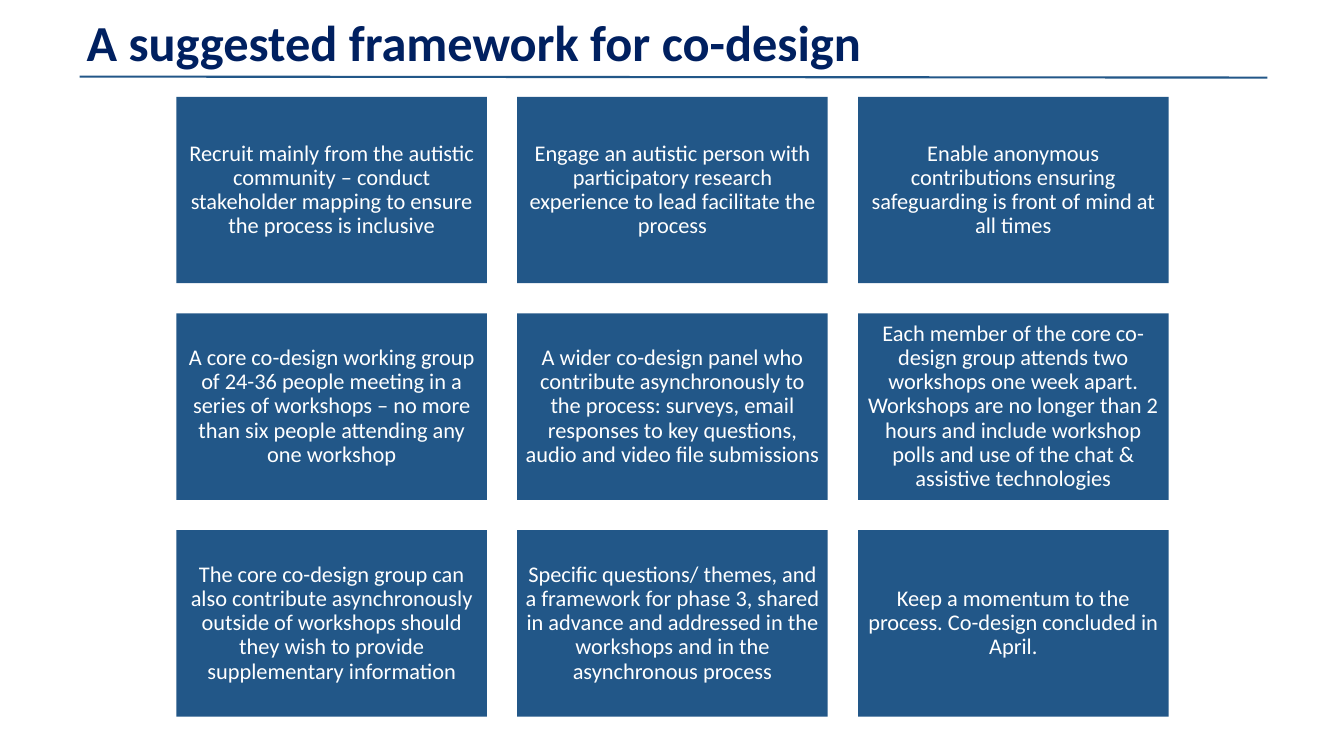
from lxml import etree
from pptx import Presentation
from pptx.dml.color import RGBColor
from pptx.enum import shapes, text
from pptx.oxml.ns import qn
from pptx.util import Inches, Pt

NAVY = RGBColor(0x00, 0x20, 0x60)
BLUE = RGBColor(0x22, 0x57, 0x88)
WHITE = RGBColor(0xFF, 0xFF, 0xFF)

LEFT, TOP = 1.75, 0.96
WIDTH, HEIGHT = 3.08, 1.85
GAP = 0.3
COLS = 3

STEPS = [
    "Recruit mainly from the autistic community – conduct stakeholder mapping "
    "to ensure the process is inclusive",
    "Engage an autistic person with participatory research experience to lead "
    "facilitate the process",
    "Enable anonymous contributions ensuring safeguarding is front of mind at "
    "all times",
    "A core co-design working group of 24-36 people meeting in a series of "
    "workshops – no more than six people attending any one workshop",
    "A wider co-design panel who contribute asynchronously to the process: "
    "surveys, email responses to key questions, audio and video file submissions",
    "Each member of the core co-design group attends two workshops one week "
    "apart. Workshops are no longer than 2 hours and include workshop polls and "
    "use of the chat & assistive technologies",
    "The core co-design group can also contribute asynchronously outside of "
    "workshops should they wish to provide supplementary information",
    "Specific questions/ themes, and a framework for phase 3, shared in advance "
    "and addressed in the workshops and in the asynchronous process",
    "Keep a momentum to the process. Co-design concluded in April.",
]


def write(shape, words, size, color, bold=False, align=text.PP_ALIGN.LEFT,
          spacing=1.0, inset=None):
    frame = shape.text_frame
    frame.word_wrap = True
    frame.auto_size = text.MSO_AUTO_SIZE.NONE
    frame.vertical_anchor = text.MSO_ANCHOR.MIDDLE
    if inset is not None:
        frame.margin_left = frame.margin_right = Inches(inset)
        frame.margin_top = frame.margin_bottom = Inches(inset)
    frame.text = words
    para = frame.paragraphs[0]
    para.alignment = align
    para.line_spacing = spacing
    para.space_before = Pt(0)
    font = para.runs[0].font
    font.name = "Calibri"
    font.size = Pt(size)
    font.bold = bold
    font.color.rgb = color


def add_title(slide, words):
    title = slide.shapes.title
    title.left, title.top = Inches(0.76), Inches(0.06)
    title.width, title.height = Inches(11.8), Inches(0.71)
    write(title, words, 36, NAVY, bold=True)


def add_rule(slide):
    """Draw the line under the title."""
    rule = slide.shapes.add_connector(
        shapes.MSO_CONNECTOR.STRAIGHT,
        Inches(0.79), Inches(0.76), Inches(12.57), Inches(0.77))
    rule.line.color.rgb = BLUE
    rule.line.width = Pt(1.5)
    etree.SubElement(rule._element.spPr, qn("a:effectLst"))


def add_card(slide, left, top, words):
    card = slide.shapes.add_shape(
        shapes.MSO_SHAPE.RECTANGLE,
        Inches(left), Inches(top), Inches(WIDTH), Inches(HEIGHT))
    card.shadow.inherit = False
    card.fill.solid()
    card.fill.fore_color.rgb = BLUE
    card.line.fill.background()
    write(card, words, 16, WHITE, align=text.PP_ALIGN.CENTER,
          spacing=0.9, inset=0.07)


def main():
    deck = Presentation()
    deck.slide_width, deck.slide_height = Inches(13.33), Inches(7.5)
    slide = deck.slides.add_slide(deck.slide_layouts.get_by_name("Title Only"))
    add_title(slide, "A suggested framework for co-design")
    add_rule(slide)
    for index, words in enumerate(STEPS):
        row, col = divmod(index, COLS)
        add_card(slide, LEFT + col * (WIDTH + GAP),
                 TOP + row * (HEIGHT + GAP), words)
    deck.save("out.pptx")


if __name__ == "__main__":
    main()
